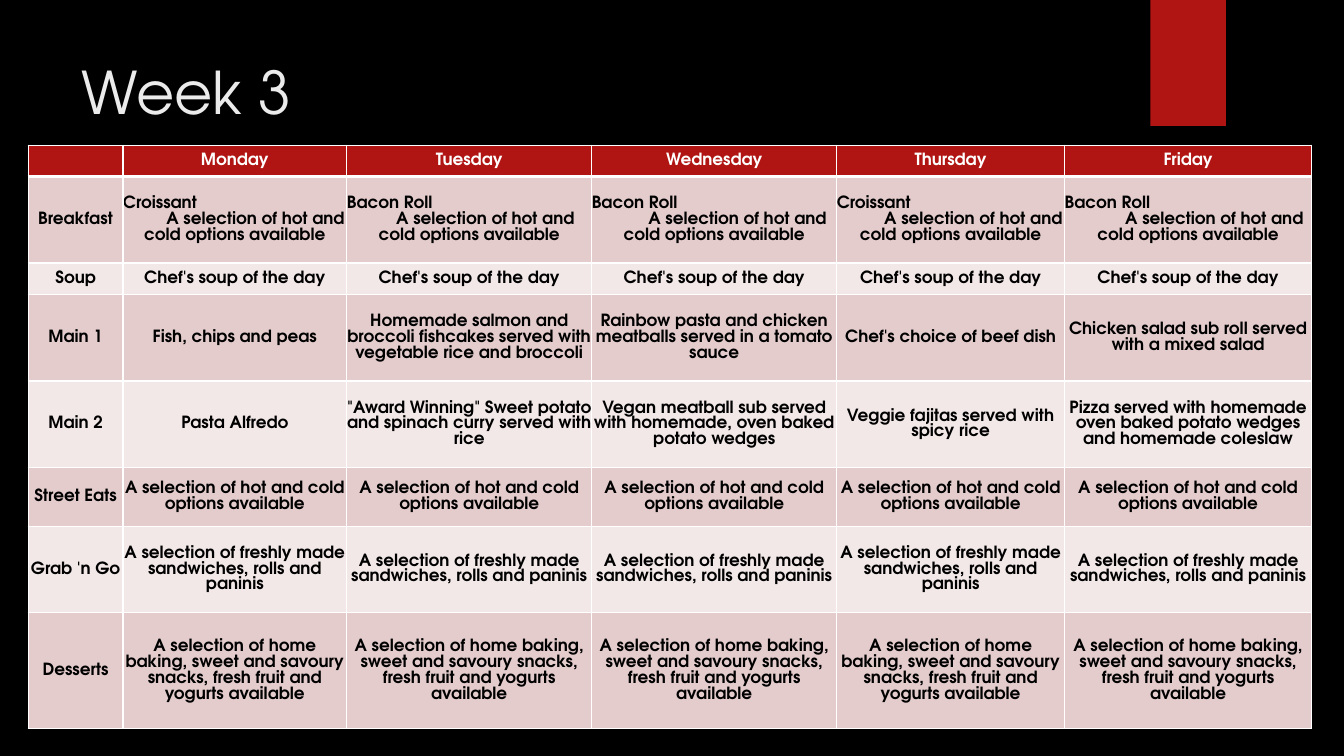
from lxml import etree
from pptx import Presentation
from pptx import util as u
from pptx.dml.color import RGBColor
from pptx.enum import shapes, text
from pptx.oxml.ns import qn

FONT = "TeX Gyre Adventor"
C = {"bg": "000000", "red": "B01513", "title": "EBEBEB", "white": "FFFFFF",
     "ink": "000000", "dark_band": "E4CCCC", "light_band": "F2E8E7"}
COLS = [0.94, 2.22, 2.43, 2.43, 2.26, 2.45]
ROWS = [0.31, 0.86, 0.31, 0.86, 0.86, 0.58, 0.86, 1.15]
OPTIONS = "A selection of hot and cold options available"
BREAKFASTS = ["Croissant", "Bacon Roll", "Bacon Roll", "Croissant", "Bacon Roll"]
BREAKFAST_INDENTS = [0.41, 0.32, 0.46, 0.45, 0.52]
MENU = [
    ["", "Monday", "Tuesday", "Wednesday", "Thursday", "Friday"],
    ["Breakfast"] + [f"{dish}\n{OPTIONS}" for dish in BREAKFASTS],
    ["Soup"] + ["Chef's soup of the day"] * 5,
    ["Main 1", "Fish, chips and peas",
     "Homemade salmon and broccoli fishcakes served with vegetable rice and broccoli",
     "Rainbow pasta and chicken meatballs served in a tomato sauce",
     "Chef's choice of beef dish",
     "Chicken salad sub roll served with a mixed salad"],
    ["Main 2", "Pasta Alfredo",
     '"Award Winning" Sweet potato and spinach curry served with rice',
     "Vegan meatball sub served with homemade, oven baked potato wedges",
     "Veggie fajitas served with spicy rice",
     "Pizza served with homemade oven baked potato wedges and homemade coleslaw"],
    ["Street Eats"] + [OPTIONS] * 5,
    ["Grab 'n Go"] + ["A selection of freshly made sandwiches, rolls and paninis"] * 5,
    ["Desserts"] + ["A selection of home baking, sweet and savoury snacks, "
                    "fresh fruit and yogurts available"] * 5,
]


def rgb(name):
    return RGBColor.from_string(C[name])


def set_font(p, size, color, bold=False):
    f = p.font
    f.name, f.size, f.bold = FONT, u.Pt(size), bold
    f.color.rgb = rgb(color)


def add_title(s, words):
    tf = s.shapes.add_textbox(u.Inches(0.71), u.Inches(0.5),
                              u.Inches(10.29), u.Inches(1.53)).text_frame
    tf.word_wrap = True
    p = tf.paragraphs[0]
    p.text = words
    set_font(p, 42, "title")


def add_banner(s):
    sp = s.shapes.add_shape(shapes.MSO_SHAPE.RECTANGLE, u.Inches(11.41), 0,
                            u.Inches(0.75), u.Inches(1.25))
    sp.shadow.inherit = False
    sp.fill.solid()
    sp.fill.fore_color.rgb = rgb("red")
    sp.line.fill.background()


def set_borders(cell, widths):
    tcPr = cell._tc.get_or_add_tcPr()
    for i, (side, width) in enumerate(widths.items()):
        ln = etree.Element(qn(f"a:ln{side}"), w=str(u.Pt(width)))
        fill = etree.SubElement(ln, qn("a:solidFill"))
        etree.SubElement(fill, qn("a:srgbClr"), val=C["white"])
        tcPr.insert(i, ln)


def fill_cell(cell, words, fill, color, widths):
    cell.fill.solid()
    cell.fill.fore_color.rgb = rgb(fill)
    set_borders(cell, widths)
    cell.margin_left = cell.margin_right = cell.margin_top = cell.margin_bottom = 0
    cell.vertical_anchor = text.MSO_ANCHOR.MIDDLE
    cell.text = words
    for p in cell.text_frame.paragraphs:
        p.alignment = text.PP_ALIGN.CENTER
        p.line_spacing = u.Pt(11.25)
        set_font(p, 12, color, bold=True)


def indent_breakfast(cell, indent):
    dish, options = cell.text_frame.paragraphs
    dish.alignment = text.PP_ALIGN.LEFT
    pPr = options._p.get_or_add_pPr()
    pPr.set("marL", "0")
    pPr.set("indent", str(u.Inches(indent)))


def add_menu(s):
    table = s.shapes.add_table(len(ROWS), len(COLS), u.Inches(0.28), u.Inches(1.44),
                               u.Inches(sum(COLS)), u.Inches(sum(ROWS))).table
    for column, width in zip(table.columns, COLS):
        column.width = u.Inches(width)
    for i, (height, line) in enumerate(zip(ROWS, MENU)):
        table.rows[i].height = u.Inches(height)
        band = "dark_band" if i % 2 else "light_band"
        fill, color = (band, "ink") if i else ("red", "white")
        widths = {"L": 1, "R": 1, "T": 3 if i == 1 else 1, "B": 1 if i else 3}
        for j, words in enumerate(line):
            fill_cell(table.cell(i, j), words, fill, color, widths)
    for j, indent in enumerate(BREAKFAST_INDENTS, 1):
        indent_breakfast(table.cell(1, j), indent)


def main():
    prs = Presentation()
    prs.slide_width, prs.slide_height = u.Inches(13.33), u.Inches(7.5)
    s = prs.slides.add_slide(prs.slide_layouts[6])
    s.background.fill.solid()
    s.background.fill.fore_color.rgb = rgb("bg")
    add_banner(s)
    add_title(s, "Week 3")
    add_menu(s)
    prs.save("out.pptx")


if __name__ == "__main__":
    main()
